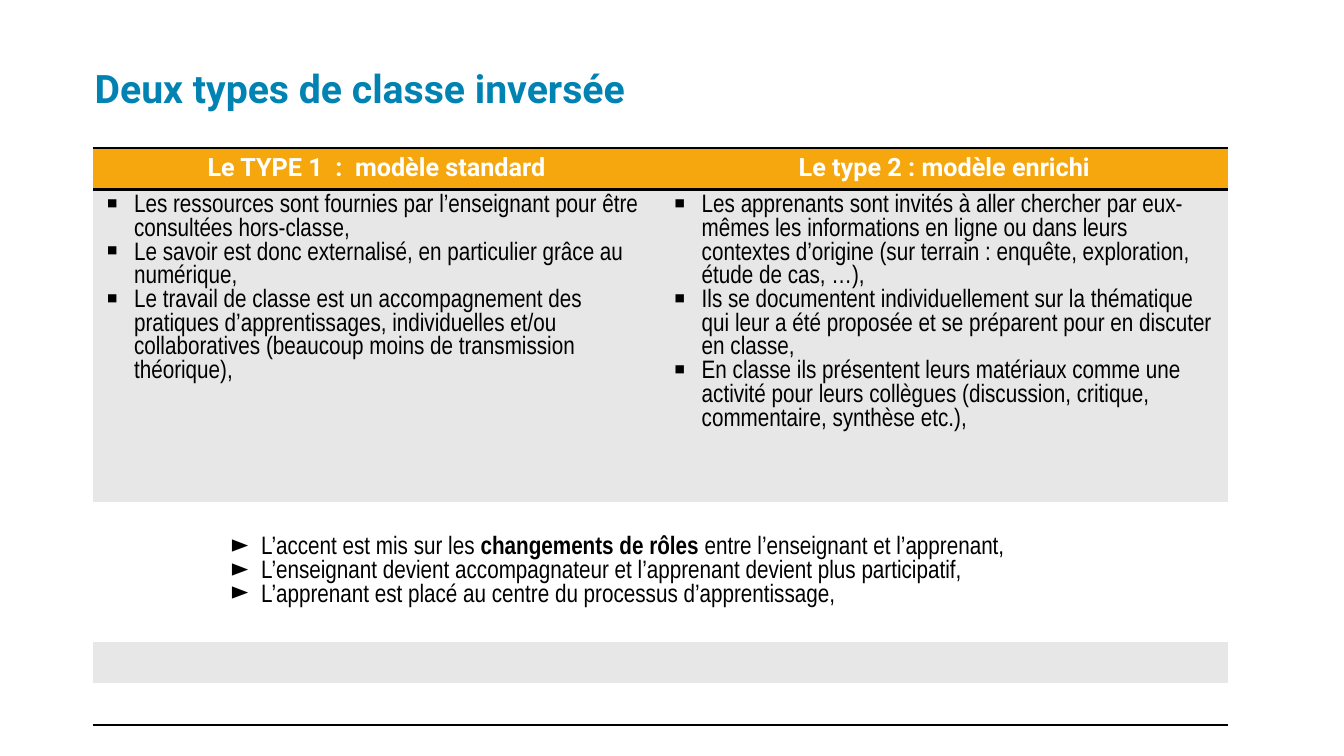
"""Build a slide comparing two types of flipped classroom."""
from lxml.etree import SubElement
from pptx import Presentation
from pptx.dml.color import RGBColor
from pptx.enum.text import MSO_ANCHOR, PP_ALIGN
from pptx.oxml import parse_xml
from pptx.oxml.ns import nsdecls, qn
from pptx.util import Inches, Pt

BLUE = RGBColor(0x00, 0x83, 0xB3)
ORANGE = RGBColor(0xF5, 0xA7, 0x0D)
GREY = RGBColor(0xE7, 0xE7, 0xE7)
WHITE = RGBColor(0xFF, 0xFF, 0xFF)
BLACK = RGBColor(0x00, 0x00, 0x00)
NO_STYLE = "{2D5ABB26-0587-4C30-8999-92F81FD0307C}"

HEADINGS = ["Le TYPE 1  :  modèle standard", "Le type 2 : modèle enrichi"]
MODELS = [
    [
        "Les ressources sont fournies par l’enseignant pour être consultées hors-classe,",
        "Le savoir est donc externalisé, en particulier grâce au numérique,",
        "Le travail de classe est un accompagnement des pratiques d’apprentissages, "
        "individuelles et/ou collaboratives (beaucoup moins de transmission théorique),",
    ],
    [
        "Les apprenants sont invités à aller chercher par eux-mêmes les informations en ligne "
        "ou dans leurs contextes d’origine (sur terrain : enquête, exploration, étude de cas, …),",
        "Ils se documentent individuellement sur la thématique qui leur a été proposée "
        "et se préparent pour en discuter en classe,",
        "En classe ils présentent leurs matériaux comme une activité pour leurs collègues "
        "(discussion, critique, commentaire, synthèse etc.),",
    ],
]
SHARED_POINTS = [
    ["L’accent est mis sur les ", "changements de rôles", " entre l’enseignant et l’apprenant,"],
    ["L’enseignant devient accompagnateur et l’apprenant devient plus participatif,"],
    ["L’apprenant est placé au centre du processus d’apprentissage,"],
]


def add_run(paragraph, text, font_name, size, color, bold):
    run = paragraph.add_run()
    run.text = text
    run.font.name = font_name
    run.font.size = Pt(size)
    run.font.color.rgb = color
    run.font.bold = bold


def fill_bullets(cell, points, bullet, margin):
    frame = cell.text_frame
    for index, pieces in enumerate(points):
        paragraph = frame.add_paragraph() if index else frame.paragraphs[0]
        properties = paragraph._p.get_or_add_pPr()
        properties.set("marL", str(Inches(margin)))
        properties.set("indent", str(Inches(-0.31)))
        SubElement(properties, qn("a:buChar")).set("char", bullet)
        for position, text in enumerate(pieces):
            add_run(paragraph, text, "Arial Narrow", 18, BLACK, position == 1)


presentation = Presentation()
presentation.slide_width = Inches(13.33)
presentation.slide_height = Inches(7.5)
slide = presentation.slides.add_slide(presentation.slide_layouts[6])

title = slide.shapes.add_textbox(Inches(0.84), Inches(0.58), Inches(11.58), Inches(0.57))
title.text_frame.word_wrap = True
title.text_frame.vertical_anchor = MSO_ANCHOR.BOTTOM
title_paragraph = title.text_frame.paragraphs[0]
title_paragraph.line_spacing = 0.8
add_run(title_paragraph, "Deux types de classe inversée", "Roboto", 28, BLUE, True)

row_heights = [0.41, 2.45, 1.39, 0.41, 0.41]
row_fills = [ORANGE, GREY, WHITE, GREY, WHITE]
row_borders = {0: ["lnT", "lnB"], 4: ["lnB"]}
table_frame = slide.shapes.add_table(
    5, 2, Inches(0.92), Inches(1.47), Inches(11.26), Inches(sum(row_heights))
)
table = table_frame.table
table._tbl.tblPr.find(qn("a:tableStyleId")).text = NO_STYLE
for row_index, height in enumerate(row_heights):
    table.rows[row_index].height = Inches(height)
    for cell in table.rows[row_index].cells:
        cell.fill.solid()
        cell.fill.fore_color.rgb = row_fills[row_index]
        for position, side in enumerate(row_borders.get(row_index, [])):
            border = parse_xml(
                f'<a:{side} {nsdecls("a")} w="{Pt(2)}"><a:solidFill>'
                f'<a:srgbClr val="{BLACK}"/></a:solidFill></a:{side}>'
            )
            cell._tc.get_or_add_tcPr().insert(position, border)

for column, heading in enumerate(HEADINGS):
    heading_paragraph = table.cell(0, column).text_frame.paragraphs[0]
    heading_paragraph.alignment = PP_ALIGN.CENTER
    add_run(heading_paragraph, heading, "Roboto", 18, WHITE, True)
    fill_bullets(table.cell(1, column), [[text] for text in MODELS[column]], "▪", 0.31)

shared_cell = table.cell(2, 0)
shared_cell.merge(table.cell(2, 1))
shared_cell.vertical_anchor = MSO_ANCHOR.MIDDLE
fill_bullets(shared_cell, SHARED_POINTS, "►", 1.57)

presentation.save("out.pptx")
